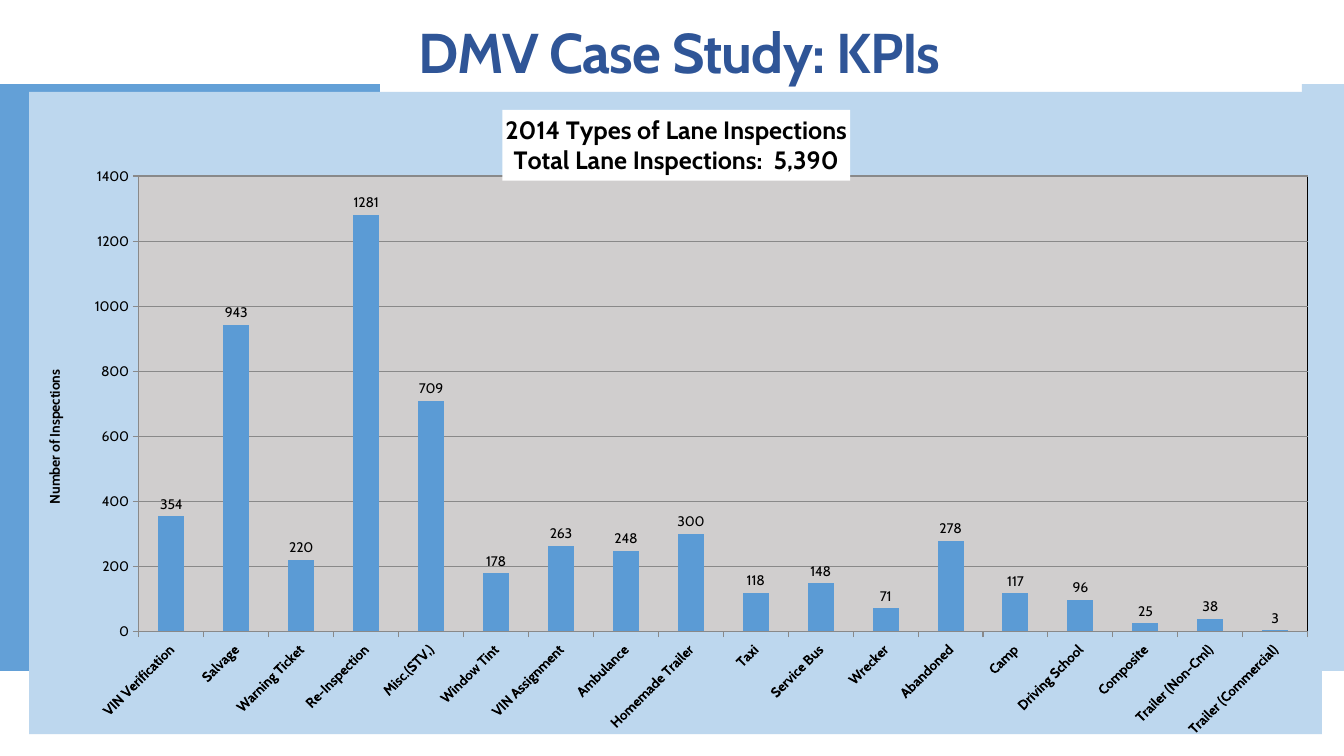
from pptx import Presentation
from pptx.chart.data import CategoryChartData
from pptx.dml.color import RGBColor
from pptx.enum.chart import XL_CHART_TYPE as Kind, XL_LABEL_POSITION as Spot
from pptx.enum.chart import XL_TICK_MARK as Tick
from pptx.enum.shapes import MSO_SHAPE as Shape
from pptx.enum.text import MSO_ANCHOR as Anchor, PP_ALIGN as Align
from pptx.oxml import parse_xml
from pptx.oxml.ns import nsdecls, qn
from pptx.util import Pt

PX = 914400 / 100.8
FONT = "Cabin"
HEX = {"blue": "5B9BD5", "navy": "2F5597", "sky": "BDD7EE", "grey": "D0CECE",
       "line": "898989", "black": "000000", "white": "FFFFFF"}
COUNTS = {
    "VIN Verification": 354, "Salvage": 943, "Warning Ticket": 220,
    "Re-Inspection": 1281, "Misc.(STV,)": 709, "Window Tint": 178,
    "VIN Assignment": 263, "Ambulance": 248, "Homemade Trailer": 300,
    "Taxi": 118, "Service Bus": 148, "Wrecker": 71, "Abandoned": 278,
    "Camp": 117, "Driving School": 96, "Composite": 25,
    "Trailer (Non-Cml)": 38, "Trailer (Commercial)": 3,
}


def emu(*px):
    return [round(n * PX) for n in px]


def rgb(name):
    return RGBColor.from_string(HEX[name])


def style(font, size, color="black", bold=False):
    font.name, font.size, font.bold = FONT, Pt(size), bold
    font.color.rgb = rgb(color)


def paint(fill, name):
    fill.solid()
    fill.fore_color.rgb = rgb(name)


def band(slide, box, alpha):
    """Draw a see-through side panel; alpha is a percentage."""
    rect = slide.shapes.add_shape(Shape.RECTANGLE, *emu(*box))
    rect.shadow.inherit = False
    rect.line.fill.background()
    paint(rect.fill, "blue")
    tint = rect._element.spPr.find(".//" + qn("a:srgbClr"))
    tint.append(parse_xml(f'<a:alpha {nsdecls("a")} val="{alpha * 1000}"/>'))


def heading(slide, box, text):
    frame = slide.shapes.add_textbox(*emu(*box)).text_frame
    frame.word_wrap = True
    frame.vertical_anchor = Anchor.MIDDLE
    para = frame.paragraphs[0]
    para.alignment, para.line_spacing = Align.CENTER, 0.9
    run = para.add_run()
    run.text = text
    style(run.font, 40, "navy", True)
    run.font._element.set("spc", "-60")


def layout(x, y, w=None, h=None):
    """Build a manual chart layout; a width and height mark the inner plot."""
    inner = w is not None
    parts = '<c:layoutTarget val="inner"/>' if inner else ""
    parts += '<c:xMode val="edge"/><c:yMode val="edge"/>'
    sizes = {"x": x, "y": y, "w": w, "h": h} if inner else {"x": x, "y": y}
    parts += "".join(f'<c:{k} val="{v}"/>' for k, v in sizes.items())
    return parse_xml(f'<c:layout {nsdecls("c")}><c:manualLayout>{parts}'
                     '</c:manualLayout></c:layout>')


def caption(title, lines, size, x, y):
    """Fill a chart or axis title and pin its top left corner."""
    frame = title.text_frame
    for i, line in enumerate(lines):
        para = frame.add_paragraph() if i else frame.paragraphs[0]
        run = para.add_run()
        run.text = line
        style(run.font, size, bold=True)
    root = title._element
    for old in root.findall(qn("c:layout")):
        root.remove(old)
    root.find(qn("c:tx")).addnext(layout(x, y))


def area(name, line=None):
    edge = (f'<a:solidFill><a:srgbClr val="{HEX[line]}"/></a:solidFill>'
            if line else "<a:noFill/>")
    return parse_xml(f'<c:spPr {nsdecls("c", "a")}><a:solidFill>'
                     f'<a:srgbClr val="{HEX[name]}"/></a:solidFill>'
                     f'<a:ln w="9525">{edge}</a:ln></c:spPr>')


def axes(chart):
    cat, val = chart.category_axis, chart.value_axis
    val.minimum_scale, val.maximum_scale, val.major_unit = 0, 1400, 200
    val.has_major_gridlines = True
    for axis in (cat, val):
        axis.major_tick_mark, axis.minor_tick_mark = Tick.OUTSIDE, Tick.NONE
        style(axis.tick_labels.font, 10, bold=axis is cat)
    for part in (cat, val, val.major_gridlines):
        part.format.line.color.rgb = rgb("line")
        part.format.line.width = Pt(0.75)
    turn = cat._element.find(qn("c:txPr")).find(qn("a:bodyPr"))
    turn.set("rot", "-2700000")
    turn.set("vert", "horz")
    caption(val.axis_title, ["Number of Inspections"], 10, 0.01, 0.43)
    side = val.axis_title.text_frame._txBody.find(qn("a:bodyPr"))
    side.set("rot", "-5400000")
    side.set("vert", "horz")


def bars(slide, box):
    data = CategoryChartData()
    data.categories = list(COUNTS)
    data.add_series("Series 1", list(COUNTS.values()))
    chart = slide.shapes.add_chart(Kind.COLUMN_CLUSTERED, *emu(*box), data).chart
    style(chart.font, 10)
    chart.has_legend = False
    chart.has_title = True
    caption(chart.chart_title, ["2014 Types of Lane Inspections",
                                "Total Lane Inspections:  5,390"], 18, 0.366, 0.028)
    paint(chart.chart_title.format.fill, "white")
    axes(chart)

    plot = chart.plots[0]
    plot.gap_width, plot.vary_by_categories = 150, False
    paint(plot.series[0].format.fill, "blue")
    plot.has_data_labels = True
    tags = plot.data_labels
    tags.show_value, tags.position = True, Spot.OUTSIDE_END
    style(tags.font, 10)

    root = chart._chartSpace.chart
    field = root.plotArea
    for old in field.findall(qn("c:layout")):
        field.remove(old)
    field.insert(0, layout(0.085, 0.131, 0.904, 0.709))
    field.append(area("grey", "black"))
    root.addnext(area("sky"))


def main():
    deck = Presentation()
    deck.slide_width, deck.slide_height = emu(1344, 756)
    slide = deck.slides.add_slide(deck.slide_layouts[6])
    band(slide, (0, 84, 380, 587), 95)
    band(slide, (1302, 84, 42, 587), 40)
    bars(slide, (29, 92, 1293, 645))
    heading(slide, (100, -18, 1159, 146), "DMV Case Study: KPIs")
    deck.save("out.pptx")


if __name__ == "__main__":
    main()
